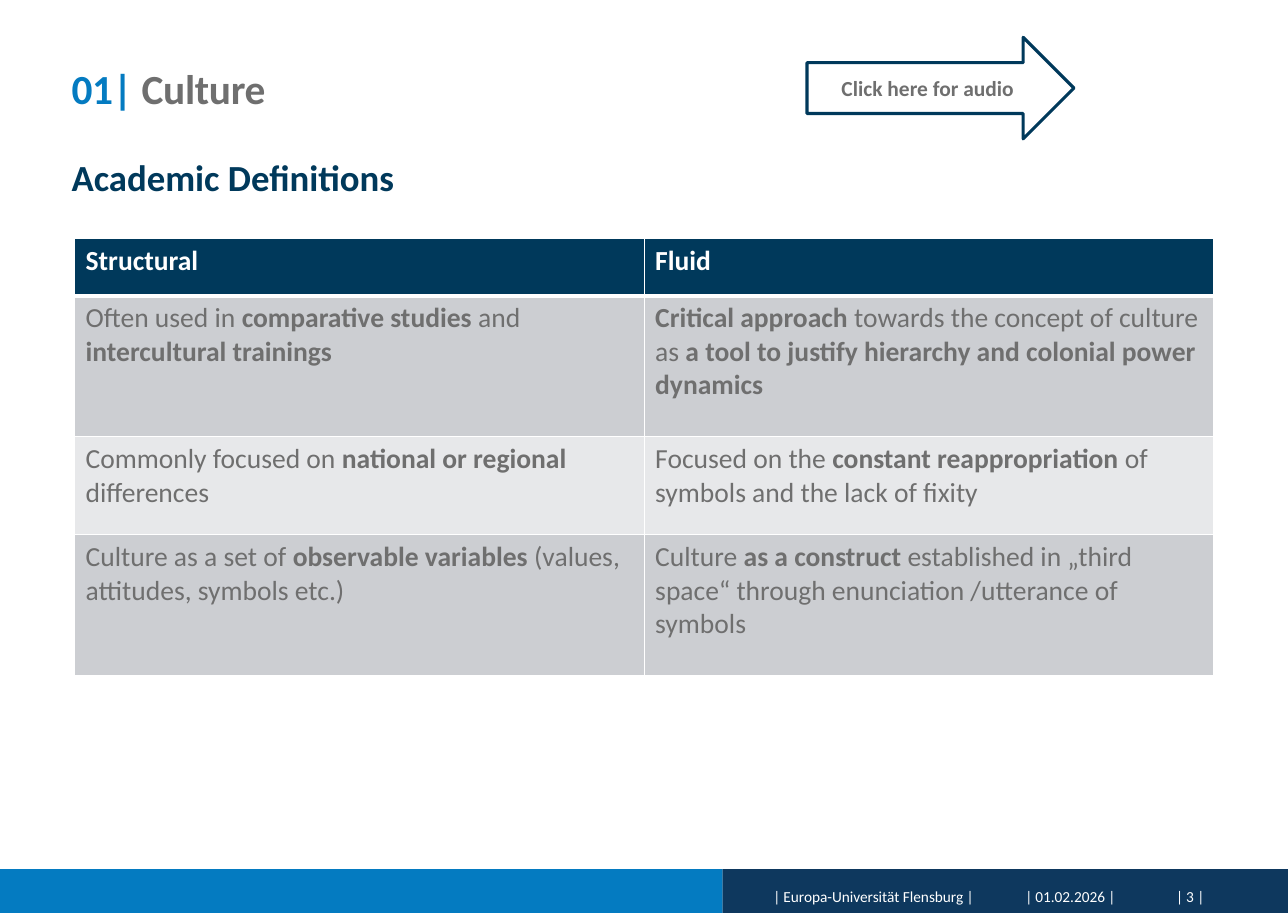
from lxml import etree
from pptx import Presentation
from pptx.dml.color import RGBColor
from pptx.enum.shapes import MSO_SHAPE
from pptx.enum.text import MSO_ANCHOR, PP_ALIGN
from pptx.oxml.ns import qn
from pptx.util import Cm, Pt

RECTANGLE, RIGHT_ARROW = MSO_SHAPE.RECTANGLE, MSO_SHAPE.RIGHT_ARROW
TOP, MIDDLE = MSO_ANCHOR.TOP, MSO_ANCHOR.MIDDLE
LEFT, CENTER = PP_ALIGN.LEFT, PP_ALIGN.CENTER

COLORS = {
    "white": "FFFFFF",
    "blue": "047BC1",
    "navy": "00395B",
    "footer": "0E385E",
    "gray": "6F6F6F",
    "band_dark": "CCCED2",
    "band_light": "E7E8EA",
}
FONT = "Calibri"
WIDTH, HEIGHT = 29.67, 21.03
BAR_TOP, BAR_SPLIT = 20.02, 16.64

HEADERS = ["Structural", "Fluid"]
# Asterisks enclose bold words.
DEFINITIONS = [
    ["Often used in *comparative studies *and *intercultural trainings*",
     "*Critical approach *towards the concept of culture as "
     "*a tool to justify hierarchy and colonial power dynamics*"],
    ["Commonly focused on *national or regional *differences",
     "Focused on the *constant reappropriation *of symbols and the lack of fixity"],
    ["Culture as a set of *observable variables *(values, attitudes, symbols etc.)",
     "Culture *as a construct *established in „third space“ through "
     "enunciation /utterance of symbols"],
]
ROW_HEIGHTS = [1.32, 3.25, 2.26, 3.25]
FOOTER_ITEMS = [
    (17.37, 5.51, "Europa-Universität Flensburg "),
    (23.06, 3.2, "01.02.2026 "),
    (26.47, 1.9, "3 "),
]


def rgb(name):
    return RGBColor.from_string(COLORS[name])


class SlideBuilder:
    def __init__(self, prs):
        self.slide = prs.slides.add_slide(prs.slide_layouts[6])

    def run(self, p, text, size, color, bold=False, spacing=0):
        """Add one run; spacing is in hundredths of a point."""
        r = p.add_run()
        r.text = text
        r.font.name = FONT
        r.font.size = Pt(size)
        r.font.bold = bold
        r.font.color.rgb = rgb(color)
        if spacing:
            r._r.get_or_add_rPr().set("spc", str(spacing))

    def shape(self, kind, x, y, w, h, fill, line=None):
        sp = self.slide.shapes.add_shape(kind, Cm(x), Cm(y), Cm(w), Cm(h))
        sp.shadow.inherit = False
        sp.fill.solid()
        sp.fill.fore_color.rgb = rgb(fill)
        if line:
            sp.line.color.rgb = rgb(line)
            sp.line.width = Pt(2)
        else:
            sp.line.fill.background()
        return sp

    def text(self, x, y, w, h, anchor=MIDDLE, align=LEFT):
        """Add a text box and return its first paragraph."""
        tf = self.slide.shapes.add_textbox(Cm(x), Cm(y), Cm(w), Cm(h)).text_frame
        tf.word_wrap = True
        tf.vertical_anchor = anchor
        p = tf.paragraphs[0]
        p.alignment = align
        return p

    def cell(self, cell, text, fill, color, top=1, bottom=1):
        """Fill a cell; top and bottom are border widths in points."""
        tc_pr = cell._tc.get_or_add_tcPr()
        for side, width in (("L", 1), ("R", 1), ("T", top), ("B", bottom)):
            ln = etree.SubElement(tc_pr, qn(f"a:ln{side}"), w=str(Pt(width)))
            solid = etree.SubElement(ln, qn("a:solidFill"))
            etree.SubElement(solid, qn("a:srgbClr"), val=COLORS["white"])
        cell.fill.solid()
        cell.fill.fore_color.rgb = rgb(fill)
        p = cell.text_frame.paragraphs[0]
        for i, part in enumerate(text.split("*")):
            if part:
                self.run(p, part, 18, color, bold=i % 2 == 1)

    def definitions_table(self, x, y, col_width):
        table = self.slide.shapes.add_table(
            len(ROW_HEIGHTS), len(HEADERS), Cm(x), Cm(y),
            Cm(col_width * len(HEADERS)), Cm(sum(ROW_HEIGHTS))).table
        table.horz_banding = False
        for col in table.columns:
            col.width = Cm(col_width)
        for row, height in zip(table.rows, ROW_HEIGHTS):
            row.height = Cm(height)
        for c, header in enumerate(HEADERS):
            self.cell(table.cell(0, c), f"*{header}*", "navy", "white", bottom=3)
        for r, texts in enumerate(DEFINITIONS, 1):
            fill = "band_dark" if r % 2 else "band_light"
            for c, text in enumerate(texts):
                self.cell(table.cell(r, c), text, fill, "gray",
                          top=3 if r == 1 else 1)

    def footer(self):
        bar_height = HEIGHT - BAR_TOP
        self.shape(RECTANGLE, BAR_SPLIT, BAR_TOP, WIDTH - BAR_SPLIT, bar_height, "footer")
        self.shape(RECTANGLE, 0, BAR_TOP, BAR_SPLIT, bar_height, "blue")
        for x, w, label in FOOTER_ITEMS:
            p = self.text(x, 20.24, w, 0.81, align=CENTER)
            self.run(p, "| ", 10, "white", spacing=-30)
            self.run(p, label, 10, "white")
            self.run(p, "|", 10, "white", spacing=-30)


def main():
    prs = Presentation()
    prs.slide_width, prs.slide_height = Cm(WIDTH), Cm(HEIGHT)
    s = SlideBuilder(prs)
    s.footer()

    p = s.text(1.4, 1.07, 26.7, 1.9)
    s.run(p, "01| ", 27, "blue", bold=True, spacing=-20)
    s.run(p, "Culture", 27, "gray", bold=True, spacing=-20)

    p = s.text(1.4, 3.43, 24.77, 2.06, anchor=TOP)
    s.run(p, "Academic Definitions", 24, "navy", bold=True)

    s.definitions_table(1.72, 5.49, 13.12)

    arrow = s.shape(RIGHT_ARROW, 18.59, 0.86, 6.15, 2.34, "white", line="navy")
    arrow.text_frame.vertical_anchor = MIDDLE
    p = arrow.text_frame.paragraphs[0]
    p.alignment = CENTER
    s.run(p, "Click here for audio", 14, "gray", bold=True)

    prs.save("out.pptx")


if __name__ == "__main__":
    main()
